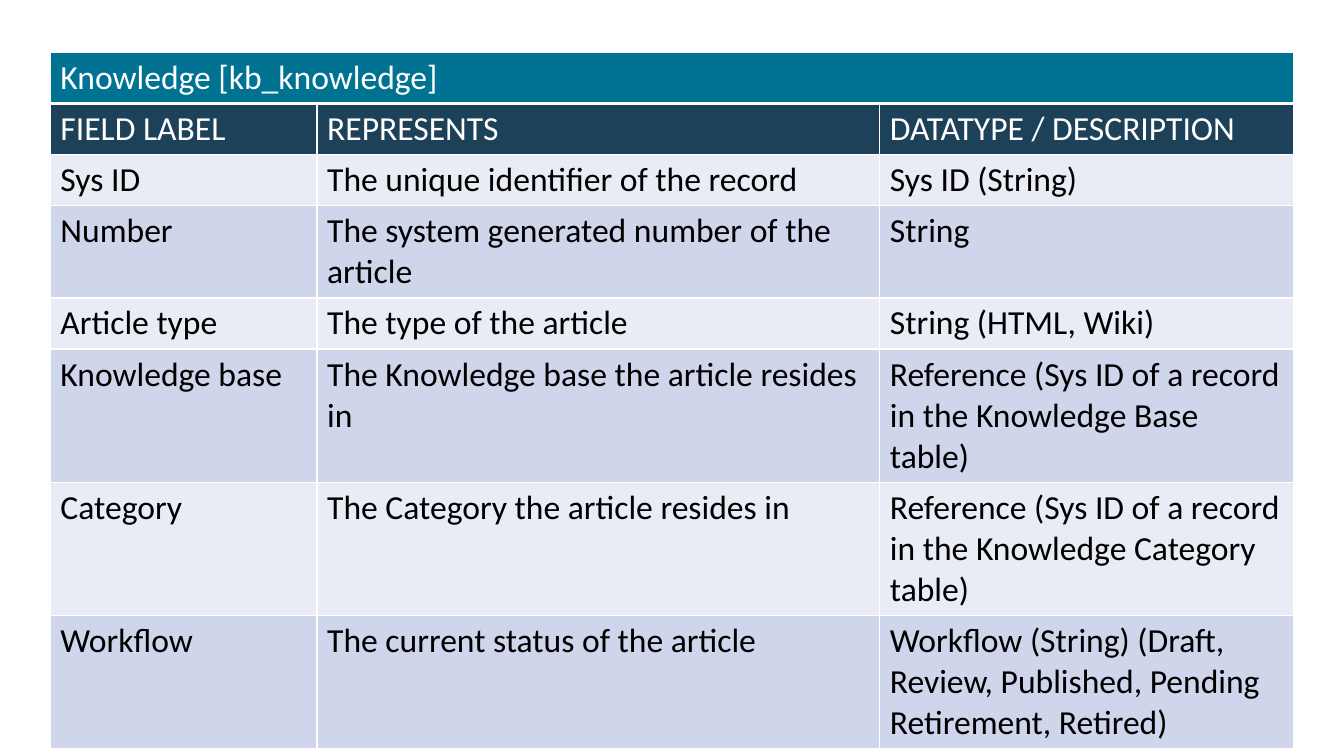
from lxml import etree
from pptx import Presentation
from pptx import util as u
from pptx.dml.color import RGBColor
from pptx.oxml.ns import qn

# Content
TITLE = "Knowledge [kb_knowledge]"
HEADINGS = ("FIELD LABEL", "REPRESENTS", "DATATYPE / DESCRIPTION")
FIELDS = [
    ("Sys ID", "The unique identifier of the record", "Sys ID (String)"),
    ("Number", "The system generated number of the article", "String"),
    ("Article type", "The type of the article", "String (HTML, Wiki)"),
    ("Knowledge base", "The Knowledge base the article resides in",
     "Reference (Sys ID of a record in the Knowledge Base table)"),
    ("Category", "The Category the article resides in",
     "Reference (Sys ID of a record in the Knowledge Category table)"),
    ("Workflow", "The current status of the article",
     "Workflow (String) (Draft, Review, Published, Pending Retirement, Retired)"),
]

# Style
WHITE = RGBColor(0xFF, 0xFF, 0xFF)
BLACK = RGBColor(0x00, 0x00, 0x00)
TEAL = RGBColor(0x00, 0x73, 0x93)
NAVY = RGBColor(0x1C, 0x41, 0x59)
BANDS = (RGBColor(0xE9, 0xEB, 0xF5), RGBColor(0xCF, 0xD5, 0xEA))
FONT, FONT_SIZE = "Calibri", 24
THIN, THICK = 1, 3

# Geometry in px, 96 to the inch
PX = 9525
SLIDE_WIDTH, SLIDE_HEIGHT = 1280, 720
LEFT, TOP, TABLE_HEIGHT = 48, 50, 653
COLUMN_WIDTHS = (254, 536, 394)
ROW_HEIGHT = 44


def set_borders(cell, top, bottom):
    """Draw white borders; top and bottom widths are in points."""
    properties = cell._tc.get_or_add_tcPr()
    widths = {"a:lnL": THIN, "a:lnR": THIN, "a:lnT": top, "a:lnB": bottom}
    for position, (tag, width) in enumerate(widths.items()):
        line = etree.Element(qn(tag), w=str(u.Pt(width)))
        fill = etree.SubElement(line, qn("a:solidFill"))
        etree.SubElement(fill, qn("a:srgbClr"), val=str(WHITE))
        properties.insert(position, line)


def format_cell(cell, content, fill, color):
    cell.fill.solid()
    cell.fill.fore_color.rgb = fill
    cell.text_frame.text = content
    for run in cell.text_frame.paragraphs[0].runs:
        run.font.name = FONT
        run.font.size = u.Pt(FONT_SIZE)
        run.font.bold = False
        run.font.color.rgb = color


def main():
    presentation = Presentation()
    presentation.slide_width = SLIDE_WIDTH * PX
    presentation.slide_height = SLIDE_HEIGHT * PX
    slide = presentation.slides.add_slide(presentation.slide_layouts[6])

    # Table grid
    rows = [(TITLE, "", ""), HEADINGS, *FIELDS]
    frame = slide.shapes.add_table(
        len(rows), len(COLUMN_WIDTHS), LEFT * PX, TOP * PX,
        sum(COLUMN_WIDTHS) * PX, TABLE_HEIGHT * PX)
    table = frame.table
    for column, width in zip(table.columns, COLUMN_WIDTHS):
        column.width = width * PX
    for row in table.rows:
        row.height = ROW_HEIGHT * PX
    frame.height = TABLE_HEIGHT * PX

    # Cells: title row, heading row, then banded fields
    for r, contents in enumerate(rows):
        fill = (TEAL, NAVY)[r] if r < 2 else BANDS[r % 2]
        color = WHITE if r < 2 else BLACK
        for c, content in enumerate(contents):
            cell = table.cell(r, c)
            format_cell(cell, content, fill, color)
            set_borders(cell, THICK if r == 1 else THIN, THICK if r == 0 else THIN)
    table.cell(0, 0).merge(table.cell(0, len(COLUMN_WIDTHS) - 1))

    presentation.save("out.pptx")


if __name__ == "__main__":
    main()
